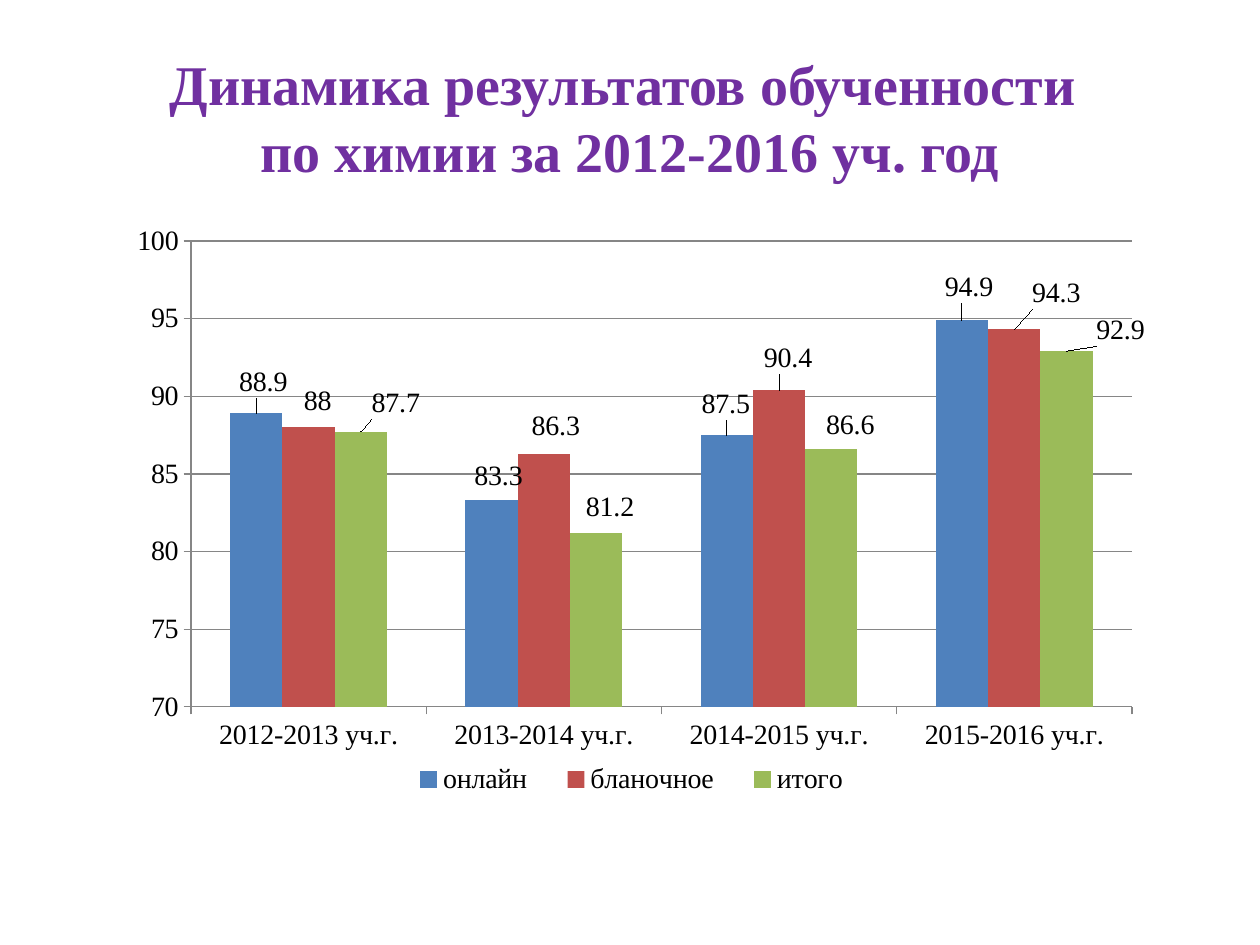
from lxml import etree
from pptx import Presentation
from pptx.chart.data import CategoryChartData
from pptx.dml.color import RGBColor
from pptx.enum.chart import XL_CHART_TYPE, XL_LABEL_POSITION, XL_LEGEND_POSITION, XL_TICK_MARK
from pptx.enum.text import MSO_ANCHOR, PP_ALIGN
from pptx.oxml.ns import qn
from pptx.util import Pt

COLUMNS = XL_CHART_TYPE.COLUMN_CLUSTERED
ABOVE = XL_LABEL_POSITION.OUTSIDE_END
BOTTOM = XL_LEGEND_POSITION.BOTTOM
OUTSIDE = XL_TICK_MARK.OUTSIDE
MIDDLE = MSO_ANCHOR.MIDDLE
CENTER = PP_ALIGN.CENTER
PX = 914400 // 126
FONT = "Times New Roman"
CHART_W, CHART_H = 1042, 635


def style(font, size, color, bold=False):
    font.name, font.size, font.bold = FONT, Pt(size), bold
    font.color.rgb = RGBColor.from_string(color)


def make_layout(x, y, w=None, h=None, inner=False):
    """Manual chart layout from px within the chart frame."""
    layout = etree.Element(qn("c:layout"))
    manual = etree.SubElement(layout, qn("c:manualLayout"))
    values = []
    if inner:
        values.append(("layoutTarget", "inner"))
    if w:
        values += [("xMode", "edge"), ("yMode", "edge")]
    values += [("x", x / CHART_W), ("y", y / CHART_H)]
    if w:
        values += [("w", w / CHART_W), ("h", h / CHART_H)]
    for tag, value in values:
        etree.SubElement(manual, qn(f"c:{tag}")).set("val", str(value))
    return layout


prs = Presentation()
prs.slide_width, prs.slide_height = 1260 * PX, 945 * PX
slide = prs.slides.add_slide(prs.slide_layouts[6])

# Title
title = slide.shapes.add_textbox(63 * PX, 38 * PX, 1134 * PX, 157 * PX).text_frame
title.word_wrap = True
title.vertical_anchor = MIDDLE
heading = title.paragraphs[0]
heading.text = "Динамика результатов обученности \nпо химии за 2012-2016 уч. год"
heading.alignment = CENTER
for run in heading.runs:
    style(run.font, 32, "7030A0", bold=True)

# Results: name, colour, values, label shifts in px
results = [
    ("онлайн", "4F81BD", (88.9, 83.3, 87.5, 94.9), ((7, -10), (7, -3), (-1, -10), (7, -12))),
    ("бланочное", "C0504D", (88, 86.3, 90.4, 94.3), ((9, -5), (12, -7), (9, -11), (42, -15))),
    ("итого", "9BBB59", (87.7, 81.2, 86.6, 92.9), ((35, -8), (14, -5), (19, -3), (54, 0))),
]
data = CategoryChartData()
data.categories = [f"{year}-{year + 1} уч.г." for year in range(2012, 2016)]
for name, _, values, _ in results:
    data.add_series(name, values)

# Chart
chart = slide.shapes.add_chart(
    COLUMNS, 123 * PX, 214 * PX, CHART_W * PX, CHART_H * PX, data).chart
style(chart.font, 16, "000000")
chart.has_title = False
plot = chart.plots[0]
plot.gap_width, plot.overlap = 150, 0
plot.vary_by_categories = False
plot_area = chart._chartSpace.find(".//" + qn("c:plotArea"))
for old in plot_area.findall(qn("c:layout")):
    plot_area.remove(old)
plot_area.insert(0, make_layout(68, 27, 941, 466, inner=True))

# Axes
scale = chart.value_axis
scale.minimum_scale, scale.maximum_scale, scale.major_unit = 70, 100, 5
scale.has_major_gridlines = True
for axis in (scale, chart.category_axis):
    axis.major_tick_mark = OUTSIDE
for line in (scale.format.line, chart.category_axis.format.line, scale.major_gridlines.format.line):
    line.color.rgb = RGBColor.from_string("868686")
    line.width = Pt(0.75)

# Columns and their shifted value labels
for series, (_, color, _, shifts) in zip(plot.series, results):
    series.format.fill.solid()
    series.format.fill.fore_color.rgb = RGBColor.from_string(color)
    series.invert_if_negative = False
    series.data_labels.show_value = True
    series.data_labels.position = ABOVE
    for i in range(len(shifts)):
        series.points[i].data_label.position = ABOVE
    for label, shift in zip(series._element.iter(qn("c:dLbl")), shifts):
        label.find(qn("c:idx")).addnext(make_layout(*shift))

# Legend
chart.has_legend = True
chart.legend.position = BOTTOM
chart.legend.include_in_layout = False
legend = chart.legend._element
for old in legend.findall(qn("c:layout")):
    legend.remove(old)
legend.find(qn("c:legendPos")).addnext(make_layout(266, 544, 485, 43))

prs.save("out.pptx")
